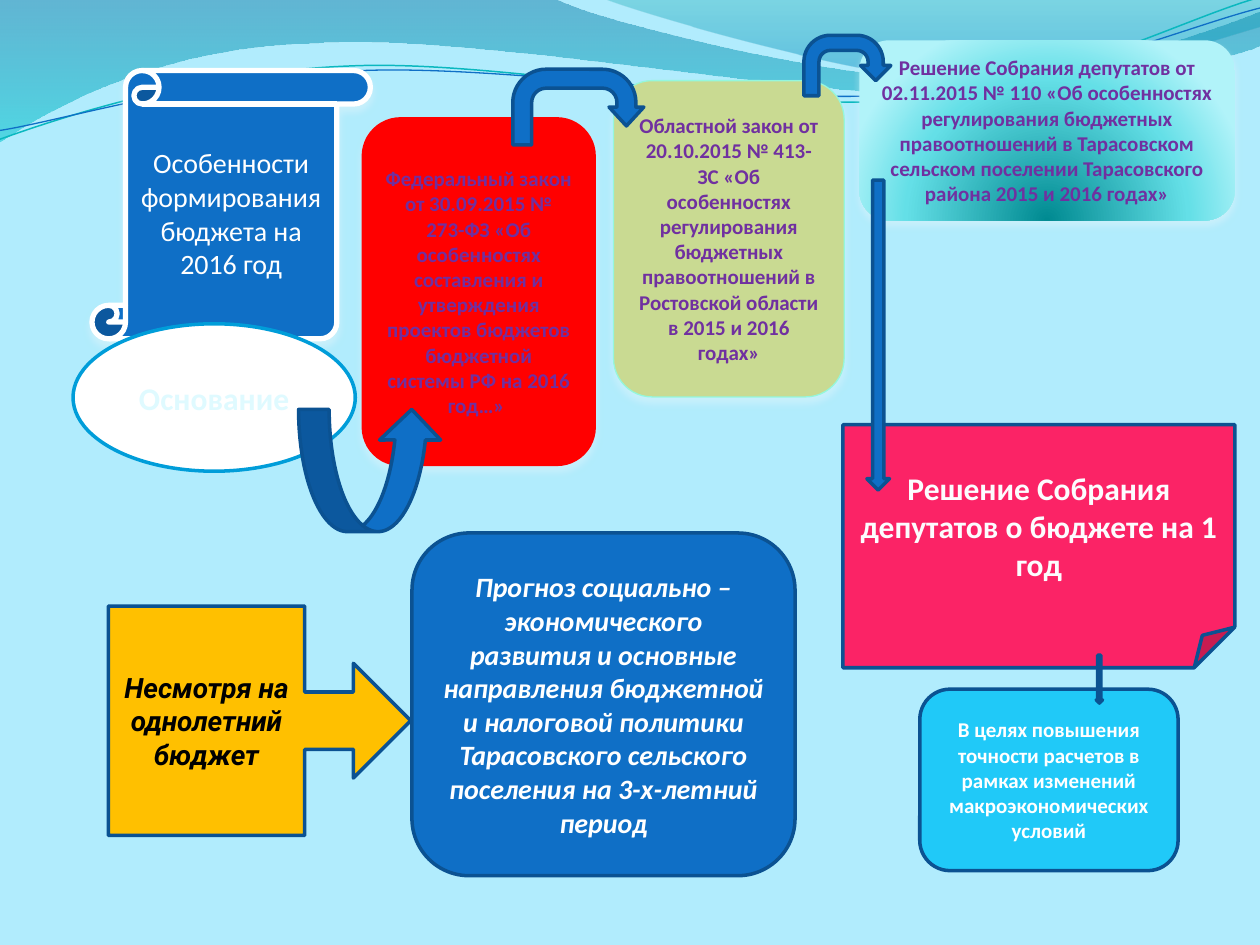
from lxml.etree import SubElement
from pptx import Presentation
from pptx.dml.color import RGBColor
from pptx.enum.shapes import MSO_SHAPE as S
from pptx.enum.text import MSO_ANCHOR, PP_ALIGN
from pptx.oxml import parse_xml
from pptx.oxml.ns import qn
from pptx.util import Inches, Pt

NS = 'xmlns:a="http://schemas.openxmlformats.org/drawingml/2006/main"'
HUE = {
    "back": "B1ECFD", "blue": "0F6FC6", "navy": "0B5292", "white": "FFFFFF",
    "red": "FF0000", "green": "C9DA92", "mint": "94F7DC", "purple": "7030A0",
    "sky": "009DD9", "pink": "FB2366", "cyan": "20C9F8", "gold": "FFC000",
    "black": "000000", "pale": "DFFAFF", "teal": "0AB8BF", "snow": "FCFCFE",
    "shade": "E6F6FA",
}

# Gradients: stops of (position, colour, opacity), then the direction
DOWN = '<a:lin ang="5400000" scaled="0"/>'
ROUND = ('<a:path path="circle"><a:fillToRect l="50000" t="130000" '
         'r="50000" b="-30000"/></a:path>')
GRAD = {
    "wave": ([(0, "0074A1", 45), (100, "00C6CF", 55)], DOWN),
    "crest": ([(0, "00A1A9", 30), (80, "008BBF", 45)], DOWN),
    "glow": ([(0, "008A91", 100), (68, "64DFE7", 100), (100, "B1F3F9", 100)], ROUND),
}

# Waves: start, steps of 2 numbers (line) or 6 (curve), fill, line, turn
WAVES = [
    ((0, 0), [(4.4, -0.01), (4.76, 0.17, 6.64, 0.63, 7.58, 0.63),
              (8.53, 0.63, 9.58, 0.26, 10, 0.09), (10.01, 0.36),
              (9.83, 0.44, 8.7, 0.76, 7.46, 0.75),
              (6.22, 0.75, 3.82, 0.28, 2.57, 0.34),
              (1.29, 0.36, 0.46, 0.83, -0.01, 1.13)], "wave", None, 0),
    ((4.79, -0.01), [(5.09, 0.11, 6.82, 0.62, 7.69, 0.65),
                     (8.56, 0.69, 9.61, 0.32, 10, 0.21), (10, 0)], "crest", None, 0),
    ((-0.02, 0.87), [(0.47, 0.72, 1.58, 0.41, 2.78, 0.42),
                     (3.96, 0.42, 5.91, 0.93, 7.12, 0.9),
                     (8.32, 0.87, 9.4, 0.36, 10, 0.22)], None, ("teal", 0.85), 357.3),
    ((-0.02, 0.8), [(0.46, 0.75, 1.64, 0.45, 2.83, 0.46),
                    (4.03, 0.46, 5.96, 0.89, 7.16, 0.85),
                    (8.35, 0.83, 9.42, 0.42, 10.02, 0.3)], None, ("blue", 0.75), 357.3),
]

EDGE = ("navy", 2)
LAW = (12, "purple", "b")
# Shapes: kind, box, fill, line, shadow, text, (size, colour, style)
ITEMS = [
    (S.VERTICAL_SCROLL, (0.73, 0.56, 2.21, 2.13), "blue", ("white", 3), "shade",
     "Особенности формирования бюджета на 2016 год", (16, "white", "")),
    (S.ROUNDED_RECTANGLE, (2.87, 0.93, 1.86, 2.77), "red", None, "shade",
     "Федеральный закон от 30.09.2015 № 273-ФЗ «Об особенностях составления и "
     "утверждения проектов бюджетов бюджетной системы РФ на 2016 год…» ", LAW),
    (S.ROUNDED_RECTANGLE, (4.87, 0.64, 1.83, 2.51), "green", ("mint", 0.75), "shade",
     "Областной закон от 20.10.2015 № 413-ЗС «Об особенностях регулирования "
     "бюджетных правоотношений в Ростовской области в 2015 и 2016 годах»", LAW),
    (S.ROUNDED_RECTANGLE, (6.82, 0.32, 2.98, 1.43), "glow", None, "shade",
     "Решение Собрания депутатов от 02.11.2015 № 110 «Об особенностях "
     "регулирования бюджетных правоотношений в Тарасовском сельском поселении "
     "Тарасовского района 2015 и 2016 годах»", LAW),
    (S.OVAL, (0.58, 2.57, 2.24, 1.17), "white", ("sky", 2), None,
     "Основание", (18, "pale", "b")),
    (S.CURVED_UP_ARROW, (2.37, 3.25, 1.14, 0.97), "blue", EDGE, None, "", None),
    (S.U_TURN_ARROW, (4.07, 0.55, 1.04, 0.6), "blue", EDGE, None, "", None),
    (S.U_TURN_ARROW, (6.38, 0.28, 0.69, 0.48), "blue", EDGE, None, "", None),
    (S.FOLDED_CORNER, (6.69, 3.37, 3.11, 1.93), "pink", EDGE, None,
     "Решение Собрания депутатов о бюджете на 1 год", (18, "snow", "b")),
    (S.DOWN_ARROW, (6.88, 1.43, 0.18, 2.46), "blue", EDGE, None, "", None),
    (S.ROUNDED_RECTANGLE, (7.3, 5.47, 2.05, 1.44), "cyan", EDGE, None,
     "В целях повышения точности расчетов в рамках изменений "
     "макроэкономических условий", (12, "white", "b")),
    (S.DOWN_ARROW, (8.7, 5.2, 0.05, 0.38), "blue", EDGE, None, "", None),
    (S.RIGHT_ARROW_CALLOUT, (0.86, 4.81, 2.4, 1.82), "gold", EDGE, None,
     "Несмотря на однолетний бюджет", (16, "black", "bi")),
    (S.ROUNDED_RECTANGLE, (3.27, 4.23, 3.04, 2.72), "blue", EDGE, None,
     "Прогноз социально – экономического развития и основные направления "
     "бюджетной и налоговой политики Тарасовского сельского поселения "
     "на 3-х-летний период", (16, "white", "bi")),
]
# Box of the U-turn arrow whose bends differ from the preset
BENDS = {(4.07, 0.55, 1.04, 0.6): (0.25, 0.23, 0.25, 0.44, 0.75)}


def rgb(name):
    return RGBColor.from_string(HUE[name])


def paint(shape, fill, line):
    shape.shadow.inherit = False
    if fill in GRAD:
        stops, way = GRAD[fill]
        marks = "".join(
            f'<a:gs pos="{pos * 1000}"><a:srgbClr val="{hue}">'
            f'<a:alpha val="{alpha * 1000}"/></a:srgbClr></a:gs>'
            for pos, hue, alpha in stops)
        props = shape.element.spPr
        geom = props.find(qn("a:prstGeom"))
        if geom is None:
            geom = props.find(qn("a:custGeom"))
        geom.addnext(parse_xml(
            f"<a:gradFill {NS}><a:gsLst>{marks}</a:gsLst>{way}</a:gradFill>"))
    elif fill:
        shape.fill.solid()
        shape.fill.fore_color.rgb = rgb(fill)
    else:
        shape.fill.background()
    if line:
        shape.line.color.rgb = rgb(line[0])
        shape.line.width = Pt(line[1])
    else:
        shape.line.fill.background()


def cast(shape, hue):
    """Drop a soft shadow straight below the shape."""
    glow = SubElement(
        shape.element.spPr.find(qn("a:effectLst")), qn("a:outerShdw"),
        blurRad=str(Pt(4.5)), dist=str(Pt(3)), dir="5400000", rotWithShape="0")
    tint = SubElement(glow, qn("a:srgbClr"), val=HUE[hue])
    SubElement(tint, qn("a:alpha"), val="48000")


def write(shape, text, size, hue, style):
    frame = shape.text_frame
    frame.text = text
    frame.word_wrap = True
    frame.vertical_anchor = MSO_ANCHOR.MIDDLE
    para = frame.paragraphs[0]
    para.alignment = PP_ALIGN.CENTER
    font = para.runs[0].font
    font.name = "Roboto" if hue == "black" else "Calibri"
    font.size = Pt(size)
    font.bold = "b" in style
    font.italic = "i" in style
    font.color.rgb = rgb(hue)


def trace(slide, start, steps, shut):
    """Draw an outline, joining each curve's three points into one Bezier."""
    dots = [(Inches(x), Inches(y)) for step in steps
            for x, y in zip(step[::2], step[1::2])]
    pen = slide.shapes.build_freeform(*map(Inches, start))
    pen.add_line_segments(dots, close=shut)
    shape = pen.convert_to_shape()
    legs = iter(list(shape.element.iter(qn("a:lnTo"))))
    for step in steps:
        leg = next(legs)
        if len(step) == 6:
            curve = parse_xml(f"<a:cubicBezTo {NS}/>")
            leg.addprevious(curve)
            for part in (leg, next(legs), next(legs)):
                curve.append(part[0])
                part.getparent().remove(part)
    return shape


def main():
    deck = Presentation()
    deck.slide_width, deck.slide_height = Inches(10), Inches(7.5)
    slide = deck.slides.add_slide(deck.slide_layouts[6])
    slide.background.fill.solid()
    slide.background.fill.fore_color.rgb = rgb("back")

    for start, steps, fill, line, turn in WAVES:
        wave = trace(slide, start, steps, bool(fill))
        wave.rotation = turn
        paint(wave, fill, line)

    for kind, box, fill, line, shade, text, look in ITEMS:
        shape = slide.shapes.add_shape(kind, *map(Inches, box))
        for i, bend in enumerate(BENDS.get(box, ())):
            shape.adjustments[i] = bend
        paint(shape, fill, line)
        if shade:
            cast(shape, shade)
        if text:
            write(shape, text, *look)

    deck.save("out.pptx")


if __name__ == "__main__":
    main()
